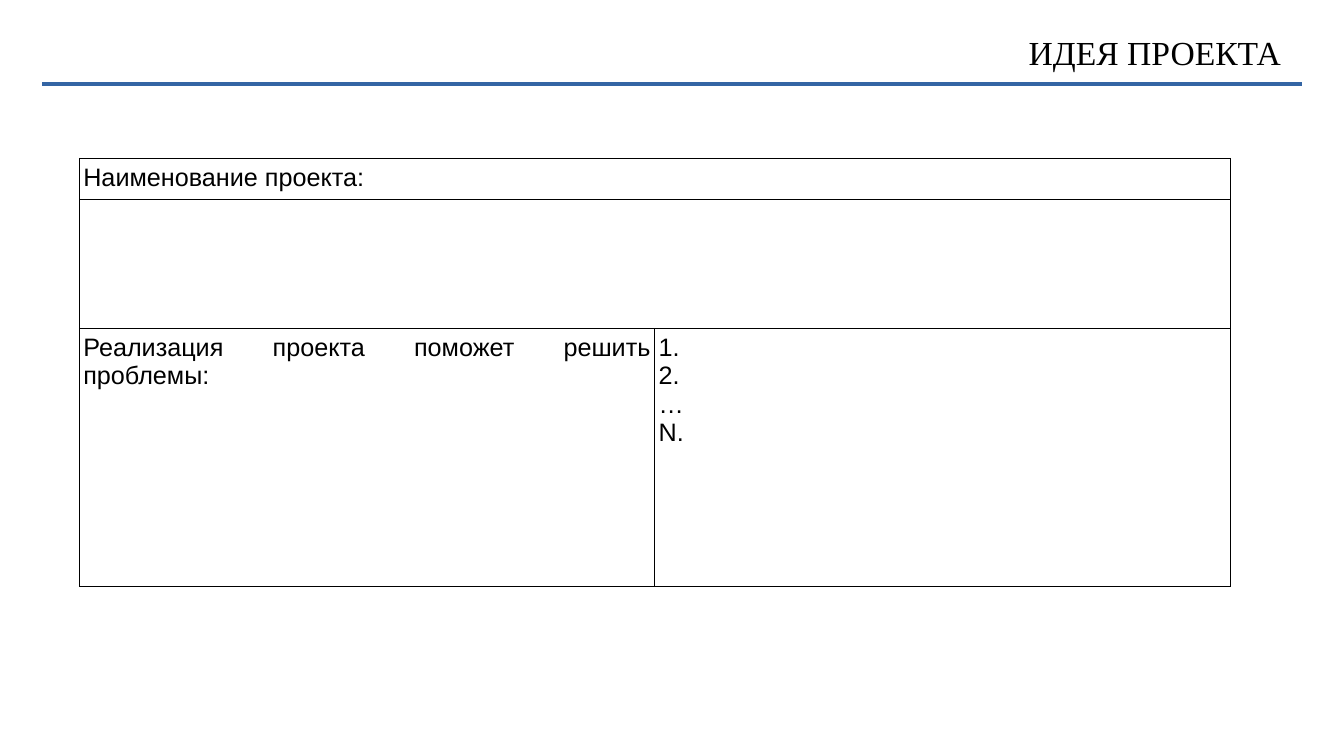
from lxml.etree import SubElement
from pptx import Presentation
from pptx.dml.color import RGBColor
from pptx.enum.shapes import MSO_CONNECTOR as Connector
from pptx.enum.text import MSO_ANCHOR as Anchor, PP_ALIGN as Align
from pptx.oxml import parse_xml
from pptx.oxml.ns import nsdecls, qn
from pptx.util import Cm, Pt

TITLE = "ИДЕЯ ПРОЕКТА"
ROWS = [
    (1.04, ["Наименование проекта:"], Align.LEFT),
    (3.25, [""], Align.LEFT),
    (6.5, ["Реализация проекта поможет решить проблемы:", "1. \n2.\n…\nN."], Align.JUSTIFY),
]
COLUMN_WIDTHS = [14.5, 14.5]
COLORS = {"text": "000000", "border": "000000", "rule": "3465A4"}
BORDER_WIDTH = Pt(0.57)


def write(frame, text, font_name, size, alignment):
    frame.text = text
    for paragraph in frame.paragraphs:
        paragraph.alignment = alignment
        paragraph.font.name = font_name
        paragraph.font.size = Pt(size)
        paragraph.font.color.rgb = RGBColor.from_string(COLORS["text"])


def add_borders(cell):
    properties = cell._tc.get_or_add_tcPr()
    for index, side in enumerate(("lnL", "lnR", "lnT", "lnB")):
        properties.insert(index, parse_xml(
            f'<a:{side} {nsdecls("a")} w="{BORDER_WIDTH}"><a:solidFill>'
            f'<a:srgbClr val="{COLORS["border"]}"/></a:solidFill></a:{side}>'))


presentation = Presentation()
presentation.slide_width, presentation.slide_height = Cm(33.87), Cm(19.05)
slide = presentation.slides.add_slide(presentation.slide_layouts[6])

rule = slide.shapes.add_connector(Connector.STRAIGHT, Cm(1.06), Cm(2.11), Cm(32.8), Cm(2.11))
rule.line.color.rgb = RGBColor.from_string(COLORS["rule"])
rule.line.width = Pt(3)
SubElement(rule._element.spPr, qn("a:effectLst"))

title = slide.shapes.add_textbox(Cm(1.8), Cm(0), Cm(30.48), Cm(2.64)).text_frame
title.word_wrap = True
title.vertical_anchor = Anchor.MIDDLE
title.margin_left = title.margin_right = title.margin_top = title.margin_bottom = 0
write(title, TITLE, "Times New Roman", 24, Align.RIGHT)

table = slide.shapes.add_table(
    len(ROWS), len(COLUMN_WIDTHS), Cm(2), Cm(3.99),
    Cm(sum(COLUMN_WIDTHS)), Cm(sum(height for height, _, _ in ROWS))).table
table.first_row = table.horz_banding = False
for column, width in zip(table.columns, COLUMN_WIDTHS):
    column.width = Cm(width)

for row_index, (height, texts, alignment) in enumerate(ROWS):
    table.rows[row_index].height = Cm(height)
    if len(texts) == 1:
        table.cell(row_index, 0).merge(table.cell(row_index, len(COLUMN_WIDTHS) - 1))
    for column_index in range(len(COLUMN_WIDTHS)):
        cell = table.cell(row_index, column_index)
        cell.fill.background()
        cell.margin_left = cell.margin_right = Cm(0.1)
        cell.margin_top = cell.margin_bottom = Cm(0.13)
        add_borders(cell)
        if column_index < len(texts):
            write(cell.text_frame, texts[column_index], "Arial", 18, alignment)

presentation.save("out.pptx")
